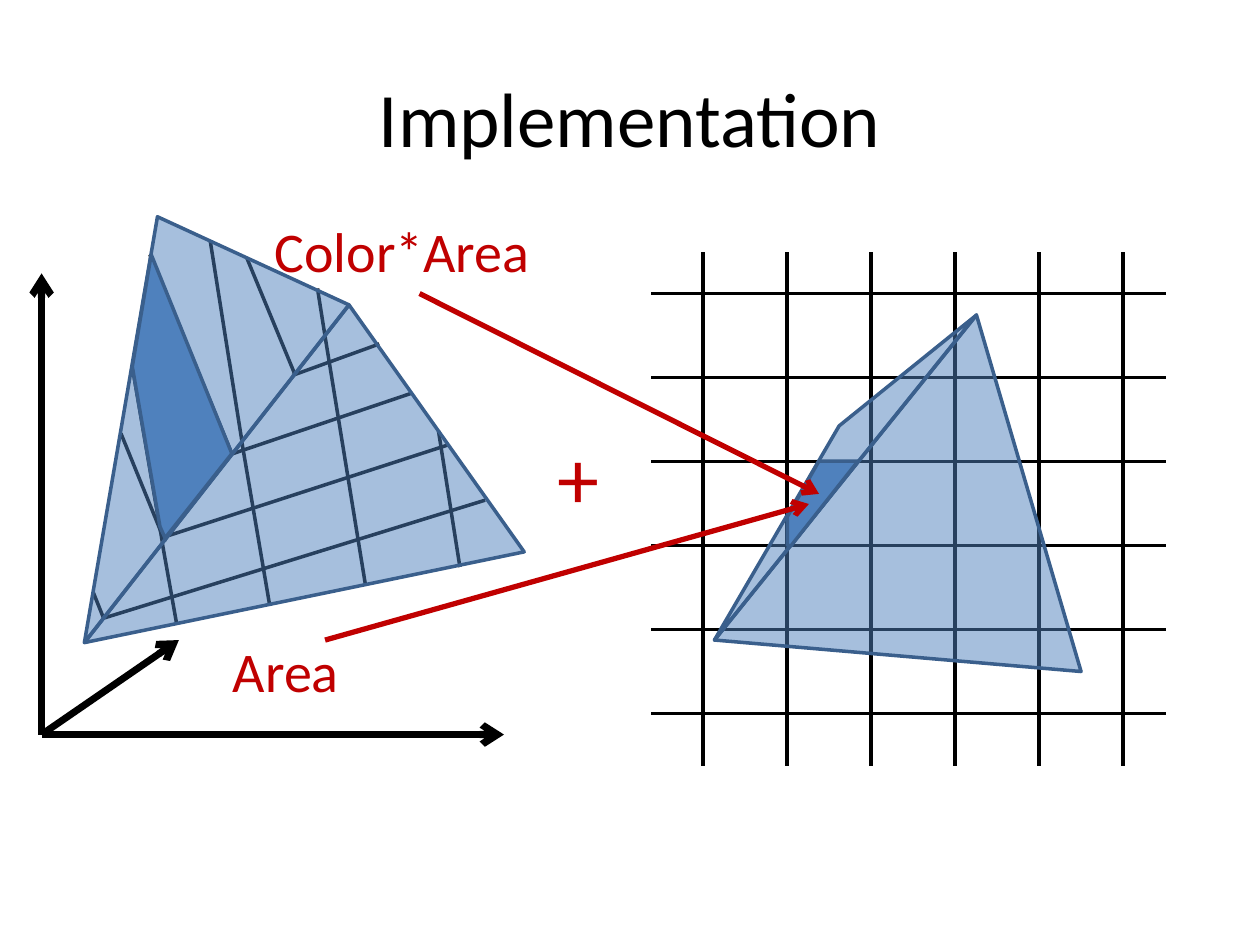
"""Build the Implementation slide: a textured mesh projected on a pixel grid."""
from lxml import etree
from pptx import Presentation
from pptx.dml.color import RGBColor
from pptx.enum.dml import MSO_THEME_COLOR
from pptx.enum.shapes import MSO_CONNECTOR
from pptx.enum.text import MSO_ANCHOR, MSO_AUTO_SIZE, PP_ALIGN
from pptx.oxml.ns import qn
from pptx.util import Inches, Pt

STRAIGHT = MSO_CONNECTOR.STRAIGHT
MIDDLE, CENTER = MSO_ANCHOR.MIDDLE, PP_ALIGN.CENTER
FIT, NO_FIT = MSO_AUTO_SIZE.SHAPE_TO_FIT_TEXT, MSO_AUTO_SIZE.NONE
BLACK = RGBColor(0x00, 0x00, 0x00)
BLUE = RGBColor(0x4F, 0x81, 0xBD)
EDGE = RGBColor(0x3A, 0x5F, 0x8C)
RED = RGBColor(0xC0, 0x00, 0x00)
FONT = "Calibri"
WIDTH, HEIGHT = 10, 7.5

# Warped pixel lines on the two mesh faces: (start, end)
MESH = [
    ((3.65, 4.5), (3.48, 3.42)), ((2.9, 4.64), (2.58, 2.67)),
    ((2.14, 4.8), (1.92, 3.51)), ((1.4, 4.94), (1.29, 4.32)),
    ((0.81, 4.91), (3.85, 3.97)), ((1.34, 4.25), (3.56, 3.53)),
    ((1.82, 3.61), (3.27, 3.12)), ((2.32, 2.98), (3.01, 2.73)),
    ((2.58, 2.67), (2.52, 2.29)), ((1.92, 3.5), (1.67, 1.92)),
    ((1.29, 4.31), (1.05, 2.91)), ((2.34, 2.97), (1.96, 2.05)),
    ((1.84, 3.6), (1.19, 2.02)), ((1.31, 4.3), (0.96, 3.44)),
    ((0.82, 4.9), (0.74, 4.7)),
]
ORIGIN = (0.33, 5.83)
AXES = [(0.33, 2.17), (4, 5.83), (1.42, 5.08)]
GRID = {"left": 5.17, "top": 2, "size": 4.08, "count": 6, "step": 2 / 3,
        "col": 5.58, "row": 2.33}
FRONT = [(2.77, 2.42), (0.67, 5.1), (4.16, 4.38)]
FACES = [
    [(7.75, 2.5), (8.58, 5.33), (5.67, 5.08)],
    [(2.77, 2.42), (1.25, 1.72), (0.67, 5.1)],
    [(7.75, 2.5), (6.66, 3.38), (5.67, 5.08)],
]
PATCHES = [
    [(1.31, 4.27), (1.84, 3.6), (1.2, 2.02), (1.05, 2.91), (1.27, 4.18)],
    [(6.5, 3.66), (6.81, 3.66), (6.28, 4.33), (6.25, 4.33), (6.25, 4.1)],
]
LABELS = [  # text, box, size, wrap
    ("Color*Area", (2.08, 1.67, 2.25, 0.64), 32, False),
    ("Area", (1.75, 5, 1.05, 0.64), 32, False),
    ("+", (4.33, 3.33, 0.54, 0.91), 48, True),
]
LINKS = [((3.33, 2.33), (6.5, 3.92)), ((2.58, 5.08), (6.42, 4))]


def inches(values):
    return [Inches(v) for v in values]


def add_line(shapes, start, end, color=BLACK, width=2, arrow=False):
    line = shapes.add_connector(STRAIGHT, *inches(start + end))
    line.line.color.rgb = color
    line.line.width = Pt(width)
    if arrow:
        etree.SubElement(line.line._get_or_add_ln(), qn("a:tailEnd"), type="arrow")
    etree.SubElement(line._element.spPr, qn("a:effectLst"))


def add_face(shapes, points, alpha=None):
    first, *rest = [inches(p) for p in points]
    form = shapes.build_freeform(*first)
    form.add_line_segments(rest, close=True)
    face = form.convert_to_shape()
    face.shadow.inherit = False
    face.fill.solid()
    face.fill.fore_color.rgb = BLUE
    face.line.color.rgb = EDGE
    face.line.width = Pt(2)
    if alpha:
        tint = face._element.spPr.find(qn("a:solidFill"))[0]
        etree.SubElement(tint, qn("a:alpha"), val=str(alpha * 1000))


def add_grid(shapes):
    left, top, size = GRID["left"], GRID["top"], GRID["size"]
    gaps = [i * GRID["step"] for i in range(GRID["count"])]
    for gap in gaps:
        y = GRID["row"] + gap
        add_line(shapes, (left, y), (left + size, y))
    for gap in gaps:
        x = GRID["col"] + gap
        add_line(shapes, (x, top), (x, top + size))


def style(para, size, color):
    para.font.name = FONT
    para.font.size = Pt(size)
    para.font.color.rgb = color


def add_title(slide):
    title = slide.shapes.title
    title.left, title.top, title.width, title.height = inches((0.5, 0.3, 9, 1.25))
    frame = title.text_frame
    frame.text = "Implementation"
    frame.vertical_anchor = MIDDLE
    frame.auto_size = NO_FIT
    frame.paragraphs[0].alignment = CENTER
    style(frame.paragraphs[0], 44, BLACK)


def add_label(shapes, text, box, size, wrap):
    frame = shapes.add_textbox(*inches(box)).text_frame
    frame.text = text
    frame.word_wrap = wrap
    frame.auto_size = FIT
    style(frame.paragraphs[0], size, RED)


def main():
    deck = Presentation()
    deck.slide_width, deck.slide_height = inches((WIDTH, HEIGHT))
    slide = deck.slides.add_slide(deck.slide_layouts.get_by_name("Title Only"))
    shapes = slide.shapes
    add_title(slide)
    for start, end in MESH:
        add_line(shapes, start, end)
    add_face(shapes, FRONT, 50)
    for end in AXES:
        add_line(shapes, ORIGIN, end, width=4, arrow=True)
    add_grid(shapes)
    for points in FACES:
        add_face(shapes, points, 50)
    for points in PATCHES:
        add_face(shapes, points)
    for label in LABELS:
        add_label(shapes, *label)
    for start, end in LINKS:
        add_line(shapes, start, end, RED, 3, True)
    deck.save("out.pptx")


if __name__ == "__main__":
    main()
